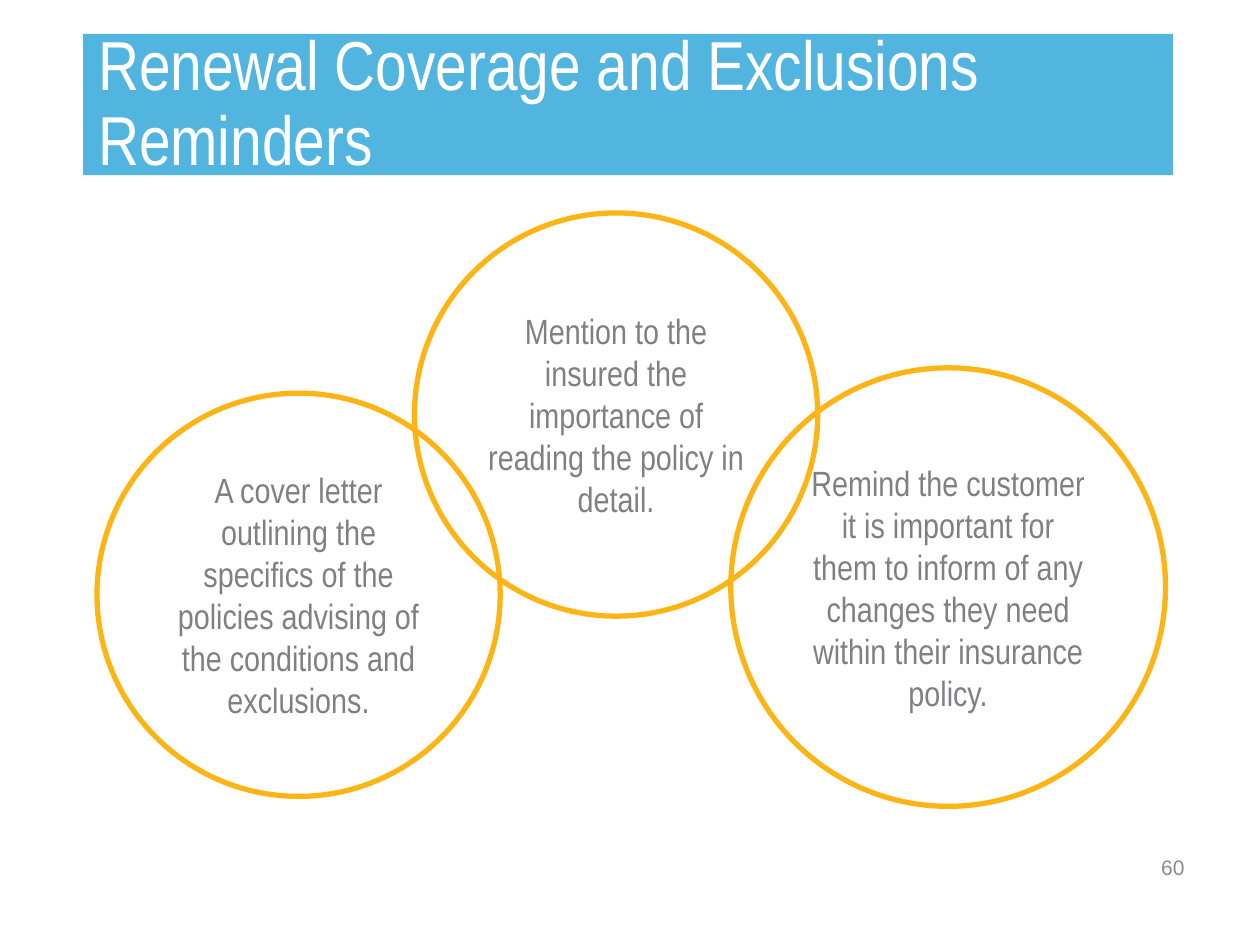
"""Build the renewal reminders slide: a title band and three overlapping circles."""
from typing import NamedTuple

from pptx import Presentation
from pptx.dml.color import RGBColor as Rgb
from pptx.enum.shapes import MSO_SHAPE as Shape
from pptx.enum.text import MSO_ANCHOR as Anchor, PP_ALIGN as Align
from pptx.util import Inches, Pt

WIDTH, HEIGHT = Inches(10), Inches(7.5)
COLOURS = {"band": "51B5E0", "ring": "FCB514", "title": "FFFFFF",
           "body": "808084", "number": "8C8C8C"}
FORMATS = {
    "title": {"name": "Arial Narrow", "size": Pt(39.6)},
    "body": {"name": "Arial Narrow", "size": Pt(20)},
    "number": {"name": "Arial", "size": Pt(12)},
}


class Area(NamedTuple):
    """Position and size in percent of the slide's width and height."""
    left: float
    top: float
    width: float
    height: float

    def lengths(self) -> list[int]:
        """Return the area as slide lengths."""
        return [round(share * side / 100)
                for share, side in zip(self, (WIDTH, HEIGHT) * 2)]


class Reminder(NamedTuple):
    """One circle and its wording."""
    area: Area
    wording: str


REMINDERS = [
    Reminder(Area(7.7, 41.6, 32, 42.67),
             "A cover letter outlining the specifics of the policies advising "
             "of the conditions and exclusions."),
    Reminder(Area(32.9, 22.53, 32, 42.67),
             "Mention to the insured the importance of reading the policy in detail."),
    Reminder(Area(58, 38.93, 34.5, 46.4),
             "Remind the customer it is important for them to inform of any "
             "changes they need within their insurance policy."),
]


def colour(role: str) -> Rgb:
    """Return the colour of a role."""
    return Rgb.from_string(COLOURS[role])


def write(holder, wording: str, role: str, align: Align, spacing: float = 1.0) -> None:
    """Write one formatted paragraph, centred vertically."""
    frame = holder.text_frame
    frame.word_wrap = True
    frame.vertical_anchor = Anchor.MIDDLE
    paragraph = frame.paragraphs[0]
    paragraph.alignment = align
    paragraph.line_spacing = spacing
    run = paragraph.add_run()
    run.text = wording
    for attribute, value in FORMATS[role].items():
        setattr(run.font, attribute, value)
    run.font.color.rgb = colour(role)


def add_band(slide, area: Area) -> None:
    """Draw the filled band behind the title."""
    band = slide.shapes.add_shape(Shape.RECTANGLE, *area.lengths())
    band.shadow.inherit = False
    band.fill.solid()
    band.fill.fore_color.rgb = colour("band")
    band.line.fill.background()


def add_label(slide, area: Area, wording: str, role: str, align: Align,
              spacing: float = 1.0) -> None:
    """Place a text box."""
    label = slide.shapes.add_textbox(*area.lengths())
    write(label, wording, role, align, spacing)


def add_reminder(slide, reminder: Reminder) -> None:
    """Draw one outlined circle with its wording."""
    ring = slide.shapes.add_shape(Shape.OVAL, *reminder.area.lengths())
    ring.shadow.inherit = False
    ring.fill.background()
    ring.line.color.rgb = colour("ring")
    ring.line.width = Pt(3)
    write(ring, reminder.wording, "body", Align.CENTER)


def main() -> None:
    """Assemble and save the slide."""
    deck = Presentation()
    deck.slide_width, deck.slide_height = WIDTH, HEIGHT
    slide = deck.slides.add_slide(deck.slide_layouts[6])
    add_band(slide, Area(6.6, 3.6, 86.5, 14.93))
    add_label(slide, Area(71.7, 89.07, 23.3, 5.33), "60", "number", Align.RIGHT)
    add_label(slide, Area(6.8, 2.13, 86.2, 18.13),
              "Renewal Coverage and Exclusions Reminders", "title", Align.LEFT, 0.9)
    for reminder in REMINDERS:
        add_reminder(slide, reminder)
    deck.save("out.pptx")


if __name__ == "__main__":
    main()
